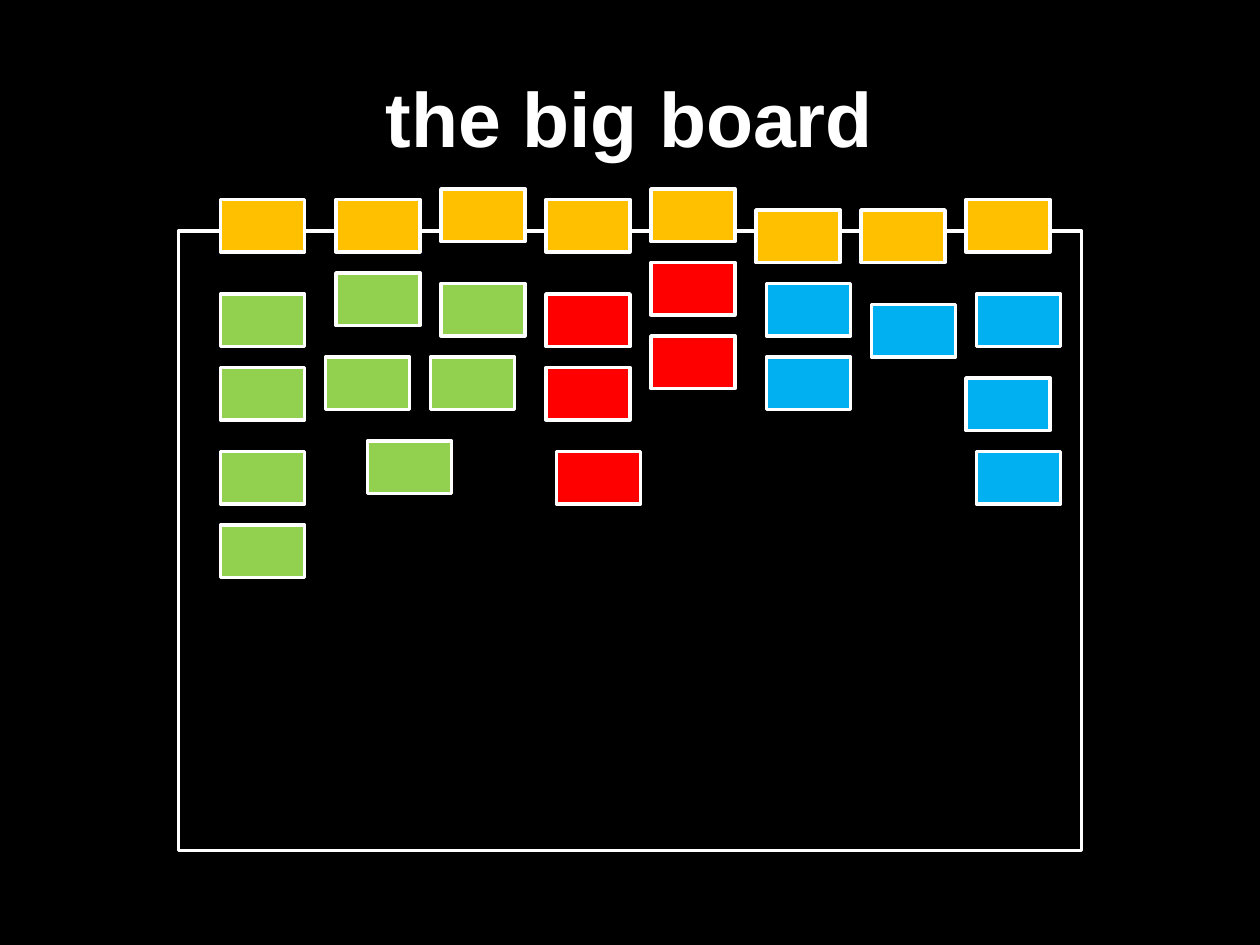
from pptx import Presentation
from pptx.dml.color import RGBColor
from pptx.enum.shapes import MSO_SHAPE
from pptx.enum.text import MSO_ANCHOR, PP_ALIGN
from pptx.util import Pt

BLACK = RGBColor(0x00, 0x00, 0x00)
WHITE = RGBColor(0xFF, 0xFF, 0xFF)
AMBER = RGBColor(0xFF, 0xC0, 0x00)
BLUE = RGBColor(0x00, 0xB0, 0xF0)
RED = RGBColor(0xFF, 0x00, 0x00)
GREEN = RGBColor(0x92, 0xD0, 0x50)

TITLE = "the big board"
TITLE_BOX = (48, 29, 864, 120)
BOARD = (136, 176, 688, 472)
CARD_SIZE = (64, 40)
CARDS = [
    (AMBER, [(168, 152), (256, 152), (336, 144), (416, 152),
             (496, 144), (576, 160), (656, 160), (736, 152)]),
    (BLUE, [(664, 232), (584, 216), (584, 272),
            (744, 224), (736, 288), (744, 344)]),
    (RED, [(416, 224), (496, 200), (416, 280), (424, 344), (496, 256)]),
    (GREEN, [(168, 224), (256, 208), (168, 280), (168, 344), (248, 272),
             (336, 216), (328, 272), (280, 336), (168, 400)]),
]

PX = 9525


def emu(*lengths):
    return [n * PX for n in lengths]


def add_rect(shapes, box, color=None):
    sp = shapes.add_shape(MSO_SHAPE.RECTANGLE, *emu(*box))
    sp.shadow.inherit = False
    if color is None:
        sp.fill.background()
    else:
        sp.fill.solid()
        sp.fill.fore_color.rgb = color
    sp.line.color.rgb = WHITE
    sp.line.width = Pt(2)


def add_title(s):
    tf = s.shapes.add_textbox(*emu(*TITLE_BOX)).text_frame
    tf.word_wrap = True
    tf.vertical_anchor = MSO_ANCHOR.MIDDLE
    p = tf.paragraphs[0]
    p.text = TITLE
    p.alignment = PP_ALIGN.CENTER
    p.font.name = "Arial"
    p.font.size = Pt(44)
    p.font.bold = True
    p.font.color.rgb = WHITE


def main():
    prs = Presentation()
    prs.slide_width, prs.slide_height = emu(960, 720)
    s = prs.slides.add_slide(prs.slide_layouts[6])
    s.background.fill.solid()
    s.background.fill.fore_color.rgb = BLACK
    add_title(s)
    add_rect(s.shapes, BOARD)
    for color, places in CARDS:
        group = s.shapes.add_group_shape()
        for place in places:
            add_rect(group.shapes, place + CARD_SIZE, color)
    prs.save("out.pptx")


if __name__ == "__main__":
    main()
